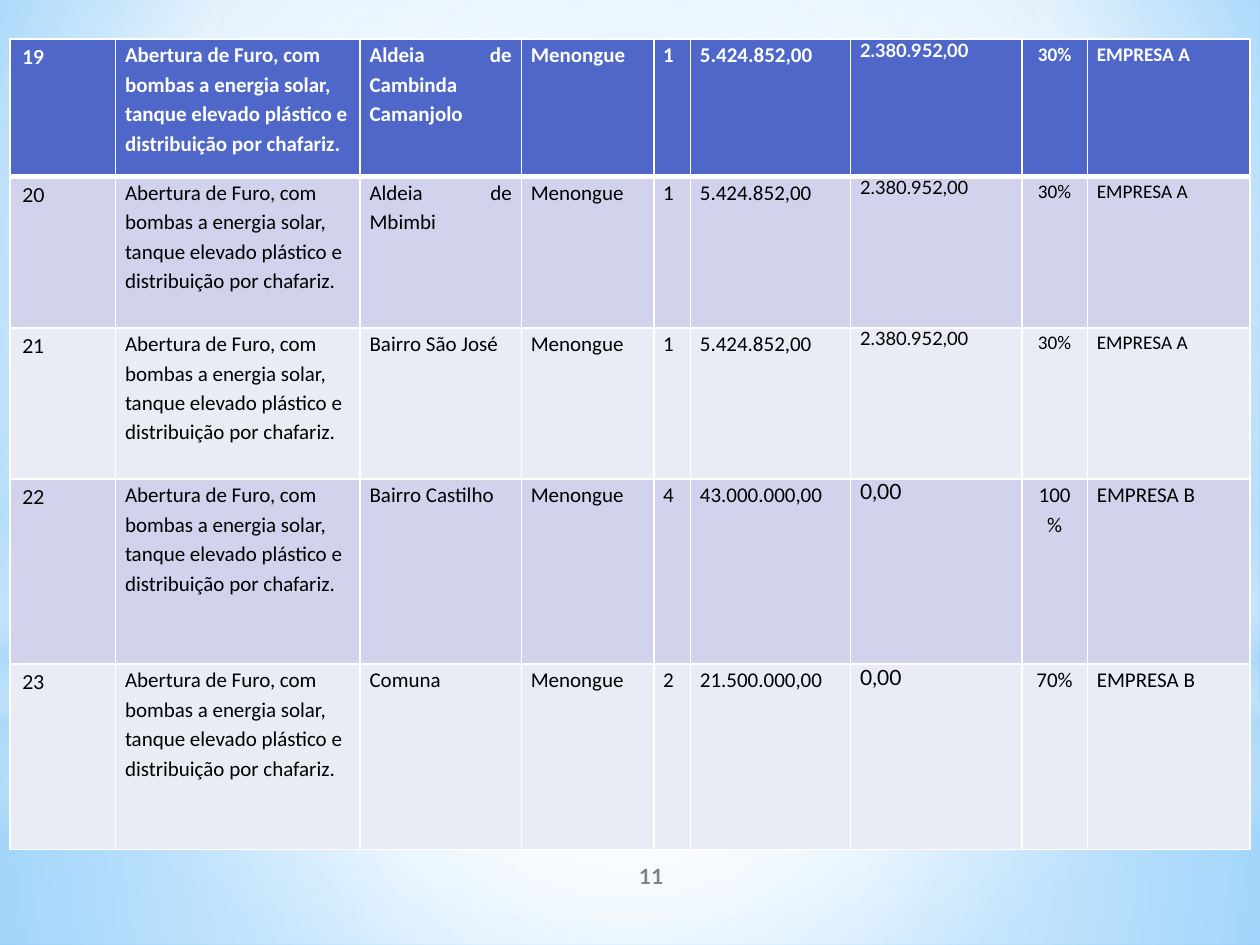
from dataclasses import dataclass
from typing import Optional

from lxml.etree import SubElement
from pptx import Presentation
from pptx.dml.color import RGBColor
from pptx.enum.shapes import MSO_SHAPE
from pptx.enum.text import MSO_ANCHOR, PP_ALIGN
from pptx.oxml.ns import qn
from pptx.util import Cm, Pt

COLORS = {
    "white": "FFFFFF",
    "black": "000000",
    "gray": "808080",
    "header": "4E67C8",
    "dark_band": "D0D3EB",
    "light_band": "E9EBF5",
    "sky": "9ED5FF",
    "deep_sky": "5BB9FF",
    "haze": "B4DCFA",
}
WORK = ("Abertura de Furo, com bombas a energia solar, "
        "tanque elevado plástico e distribuição por chafariz.")
MUNICIPALITY = "Menongue"
CENTER = (50, 50, 50, 50)


@dataclass
class Glow:
    preset: MSO_SHAPE
    top: float
    height: float
    stops: list
    focus: Optional[tuple] = CENTER


@dataclass
class Column:
    width: float
    font: str = "Calibri"
    align: PP_ALIGN = PP_ALIGN.JUSTIFY
    spacing: Optional[float] = 1.15
    margins: tuple = (0.19, 0)


@dataclass
class Project:
    number: str
    place: str
    units: str
    cost: str
    paid: str
    progress: str
    contractor: str
    height: float
    fill: str
    paid_size: float = 10.5
    status_size: float = 11

    def texts(self) -> list:
        return [self.number, WORK, self.place, MUNICIPALITY, self.units,
                self.cost, self.paid, self.progress, self.contractor]

    def sizes(self) -> list:
        return [11, 12, 12, 12, 12, 12,
                self.paid_size, self.status_size, self.status_size]


GLOWS = [
    Glow(MSO_SHAPE.RECTANGLE, 14.17, 4.88,
         [(0, "white", 91), (37, "white", 76), (100, "haze", 79)]),
    Glow(MSO_SHAPE.RECTANGLE, 0, 14.17,
         [(0, "white", 89), (48, "white", 62), (100, "haze", 79)]),
    Glow(MSO_SHAPE.RECTANGLE, 10.46, 6.35,
         [(0, "white", 0), (29, "white", 30), (45, "haze", 40),
          (55, "white", 26), (65, "haze", 60), (100, "white", 0)], None),
    Glow(MSO_SHAPE.OVAL, 4.45, 14.17,
         [(0, "white", 100), (56, "white", 0)]),
]
COLUMNS = [
    Column(2.13, "Lato", PP_ALIGN.LEFT, None, (0.25, 0.13)),
    Column(4.93, align=PP_ALIGN.LEFT),
    Column(3.25),
    Column(2.67),
    Column(0.74),
    Column(3.23),
    Column(3.45, "Lato", PP_ALIGN.LEFT, None),
    Column(1.32, align=PP_ALIGN.CENTER),
    Column(3.28),
]
PROJECTS = [
    Project("19", "Aldeia de Cambinda Camanjolo", "1", "5.424.852,00",
            "2.380.952,00", "30%", "EMPRESA A", 2.77, "header"),
    Project("20", "Aldeia de Mbimbi", "1", "5.424.852,00",
            "2.380.952,00", "30%", "EMPRESA A", 3.05, "dark_band"),
    Project("21", "Bairro São José", "1", "5.424.852,00",
            "2.380.952,00", "30%", "EMPRESA A", 3.05, "light_band"),
    Project("22", "Bairro Castilho", "4", "43.000.000,00",
            "0,00", "100%", "EMPRESA B", 3.73, "dark_band", 12, 12),
    Project("23", "Comuna", "2", "21.500.000,00",
            "0,00", "70%", "EMPRESA B", 3.73, "light_band", 12, 12),
]


def rgb(name: str) -> RGBColor:
    return RGBColor.from_string(COLORS[name])


def set_gradient(parent, stops: list, focus: Optional[tuple]) -> None:
    solid = parent.find(qn("a:solidFill"))
    gradient = SubElement(parent, qn("a:gradFill"), rotWithShape="1")
    parent.replace(solid, gradient)
    stop_list = SubElement(gradient, qn("a:gsLst"))
    for position, color, opacity in stops:
        stop = SubElement(stop_list, qn("a:gs"), pos=str(position * 1000))
        tint = SubElement(stop, qn("a:srgbClr"), val=COLORS[color])
        if opacity < 100:
            SubElement(tint, qn("a:alpha"), val=str(opacity * 1000))
    if focus is None:
        SubElement(gradient, qn("a:lin"), ang="5400000", scaled="0")
        return
    circle = SubElement(gradient, qn("a:path"), path="circle")
    SubElement(circle, qn("a:fillToRect"),
               {side: str(share * 1000) for side, share in zip("ltrb", focus)})


def draw_glow(slide, glow: Glow) -> None:
    shape = slide.shapes.add_shape(
        glow.preset, 0, Cm(glow.top), Cm(25.4), Cm(glow.height))
    shape.shadow.inherit = False
    shape.line.fill.background()
    shape.fill.solid()
    set_gradient(shape.element.spPr, glow.stops, glow.focus)


def write(paragraph, text: str, color: str, **font_format) -> None:
    run = paragraph.add_run()
    run.text = text
    run.font.color.rgb = rgb(color)
    for attribute, value in font_format.items():
        setattr(run.font, attribute, value)


def set_borders(cell, widths: dict) -> None:
    properties = cell._tc.get_or_add_tcPr()
    for side, width in widths.items():
        line = SubElement(properties, qn(f"a:ln{side}"), w=str(Pt(width)))
        fill = SubElement(line, qn("a:solidFill"))
        SubElement(fill, qn("a:srgbClr"), val=COLORS["white"])


def fill_cell(cell, text: str, size: float, column: Column,
              fill: str, is_header: bool) -> None:
    borders = {"L": 1, "R": 1, "T": 1, "B": 3 if is_header else 1}
    if not is_header:
        del borders["T"]
    set_borders(cell, borders)
    cell.fill.solid()
    cell.fill.fore_color.rgb = rgb(fill)
    across, down = map(Cm, column.margins)
    margins = {"margin_left": across, "margin_right": across,
               "margin_top": down, "margin_bottom": down}
    for attribute, value in margins.items():
        setattr(cell, attribute, value)
    paragraph = cell.text_frame.paragraphs[0]
    paragraph.alignment = column.align
    paragraph.line_spacing = column.spacing
    write(paragraph, text, "white" if is_header else "black",
          name=column.font, size=Pt(size), bold=is_header)


def draw_projects(slide) -> None:
    table = slide.shapes.add_table(
        len(PROJECTS), len(COLUMNS), Cm(0.2), Cm(0.79),
        Cm(sum(column.width for column in COLUMNS)),
        Cm(sum(project.height for project in PROJECTS))).table
    for grid_column, column in zip(table.columns, COLUMNS):
        grid_column.width = Cm(column.width)
    for index, (row, project) in enumerate(zip(table.rows, PROJECTS)):
        row.height = Cm(project.height)
        for cell, text, size, column in zip(
                row.cells, project.texts(), project.sizes(), COLUMNS):
            fill_cell(cell, text, size, column, project.fill, index == 0)


def draw_page_number(slide) -> None:
    frame = slide.shapes.add_textbox(
        Cm(10.59), Cm(17.15), Cm(5.08), Cm(1.02)).text_frame
    frame.word_wrap = True
    frame.vertical_anchor = MSO_ANCHOR.MIDDLE
    number = frame.paragraphs[0]
    number.alignment = PP_ALIGN.CENTER
    write(number, "11", "gray", name="Lato", size=Pt(12), bold=True)


def main() -> None:
    deck = Presentation()
    deck.slide_width, deck.slide_height = Cm(25.4), Cm(19.05)
    slide = deck.slides.add_slide(deck.slide_layouts[6])
    slide.background.fill.solid()
    set_gradient(slide.element.find(".//" + qn("p:bgPr")),
                 [(0, "sky", 100), (60, "white", 100), (100, "deep_sky", 100)],
                 (20, 10, 20, 60))
    for glow in GLOWS:
        draw_glow(slide, glow)
    draw_projects(slide)
    draw_page_number(slide)
    deck.save("out.pptx")


if __name__ == "__main__":
    main()
